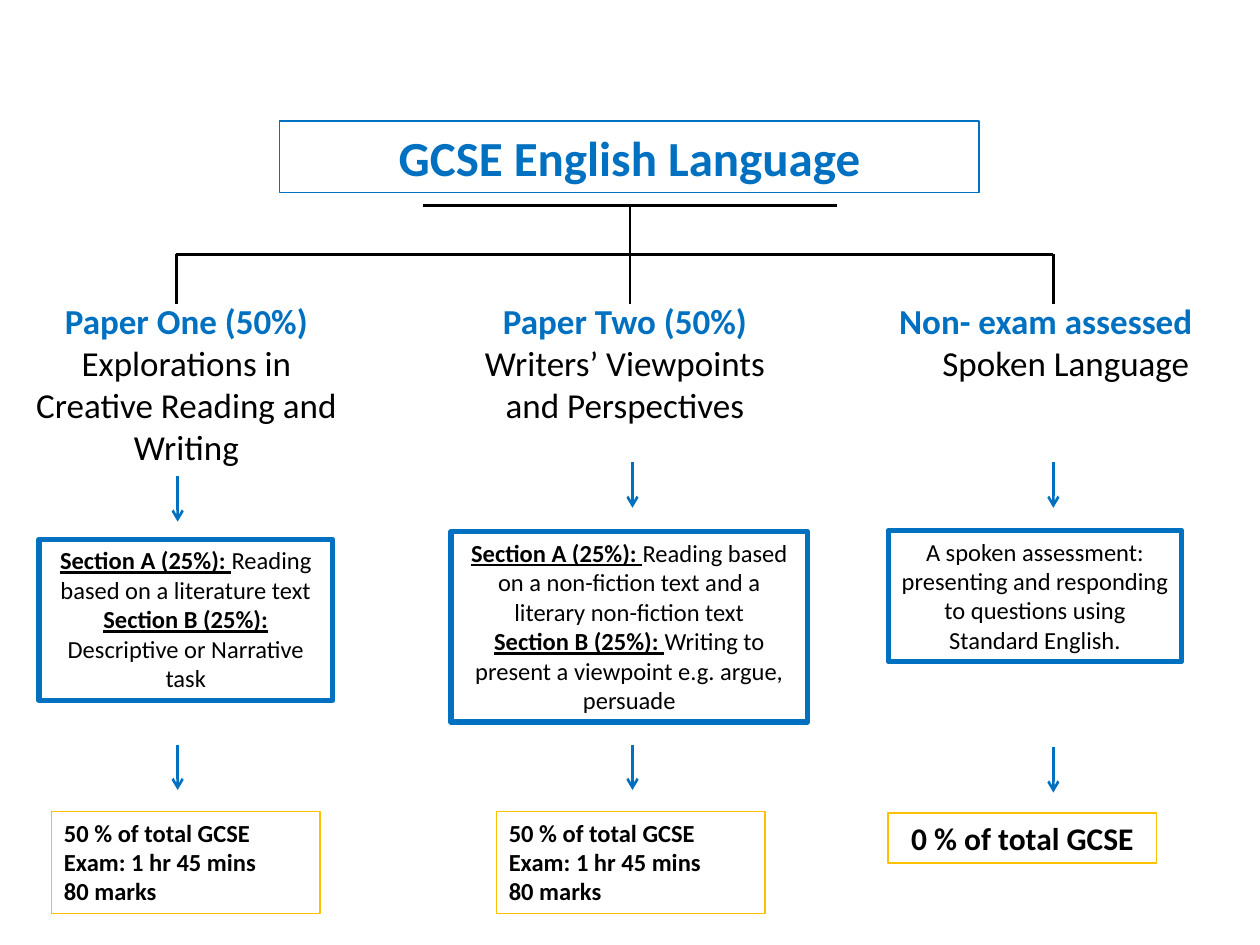
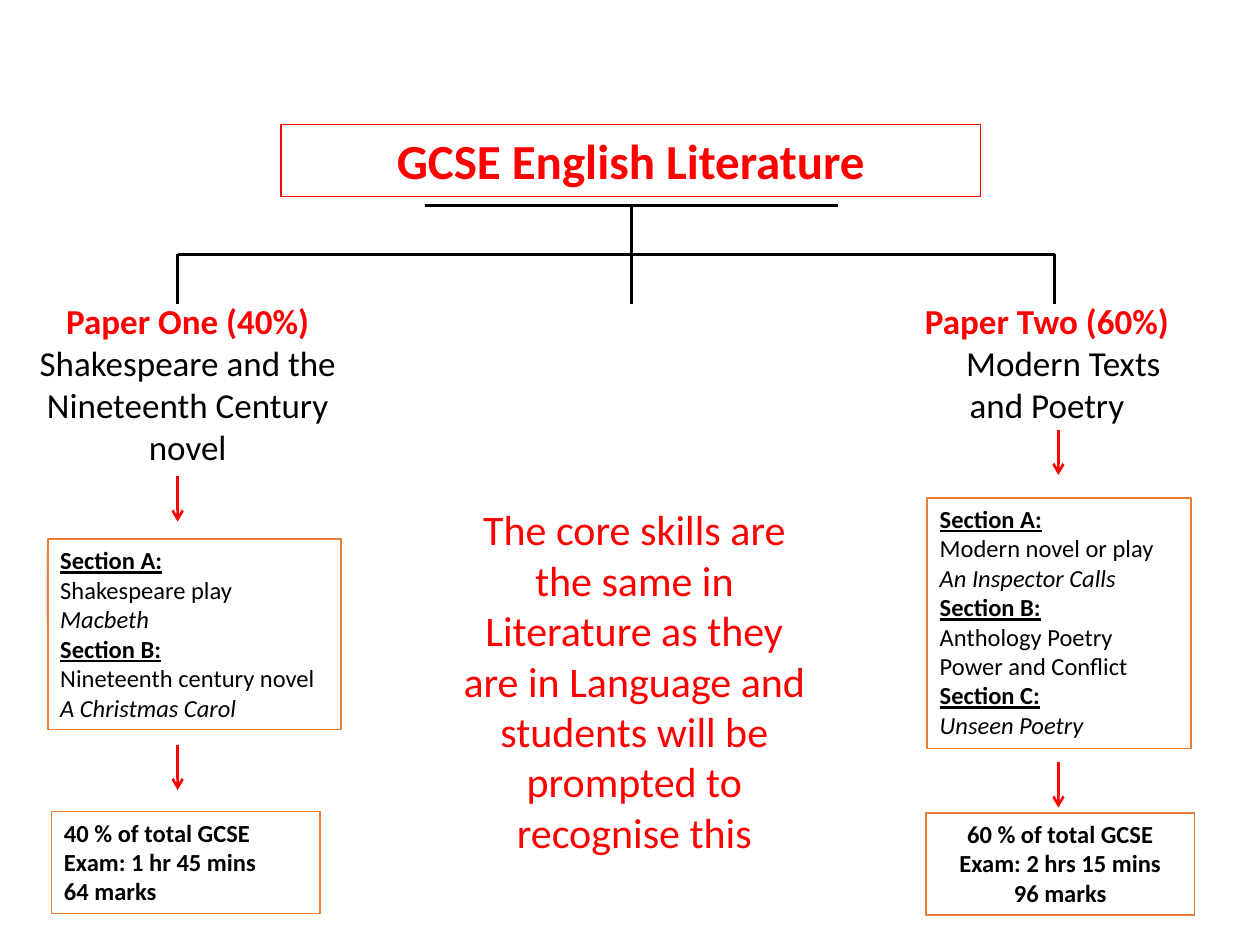
from dataclasses import dataclass

from lxml import etree
from pptx import Presentation
from pptx import util as u
from pptx.dml.color import RGBColor
from pptx.enum import shapes, text
from pptx.oxml import ns

COLORS = {
    "black": "000000", "white": "FFFFFF", "blue": "0070C0", "gold": "FFC000",
    "red": "FF0000", "orange": "ED7D31", "yellow": "FFFF00", "pale": "DAE3F3",
}
FONT = "Calibri"
LEFT, CENTER = text.PP_ALIGN.LEFT, text.PP_ALIGN.CENTER
TREE_TOP, TREE_BAR, TREE_END = 1.63, 2.02, 2.41
ARROW_LENGTH = 0.36


@dataclass
class Line:
    """One paragraph: (words, style) spans, where style holds b, i or u."""
    spans: list
    color: str = "black"
    indent: float = 0


def line(words, style="", color="black", indent=0):
    return Line([(words, style)], color, indent)


def rgb(name):
    return RGBColor.from_string(COLORS[name])


# Text
def set_style(font, style):
    font.bold = "b" in style
    font.italic = "i" in style
    font.underline = "u" in style


def write_lines(box, lines, size, align):
    frame = box.text_frame
    frame.word_wrap = True
    frame.auto_size = text.MSO_AUTO_SIZE.SHAPE_TO_FIT_TEXT
    frame.vertical_anchor = text.MSO_ANCHOR.TOP
    for index, item in enumerate(lines):
        para = frame.add_paragraph() if index else frame.paragraphs[0]
        para.alignment = align
        if item.indent:
            para._p.get_or_add_pPr().set("marL", str(u.Inches(item.indent)))
        para.font.name, para.font.size = FONT, u.Pt(size)
        para.font.color.rgb = rgb(item.color)
        for words, style in item.spans:
            span = para.add_run()
            span.text = words
            if len(item.spans) > 1:
                set_style(span.font, style)
        if len(item.spans) == 1:
            set_style(para.font, item.spans[0][1])


def add_text(page, place, lines, size=20):
    box = page.shapes.add_textbox(*map(u.Inches, place))
    write_lines(box, lines, size, CENTER)


# Boxes and lines
def add_panel(page, place, border, width, fill=None,
              kind=shapes.MSO_SHAPE.RECTANGLE):
    panel = page.shapes.add_shape(kind, *map(u.Inches, place))
    panel.shadow.inherit = False
    if fill:
        panel.fill.solid()
        panel.fill.fore_color.rgb = rgb(fill)
    else:
        panel.fill.background()
    panel.line.color.rgb = rgb(border)
    panel.line.width = u.Pt(width)
    return panel


def add_box(page, place, lines, border, width=1, size=14, align=LEFT, fill="white"):
    write_lines(add_panel(page, place, border, width, fill), lines, size, align)


def add_line(page, x1, y1, x2, y2, color="black"):
    link = page.shapes.add_connector(
        shapes.MSO_CONNECTOR.STRAIGHT, *map(u.Inches, (x1, y1, x2, y2)))
    link.line.color.rgb = rgb(color)
    link.line.width = u.Pt(1.5)
    etree.SubElement(link._element.spPr, ns.qn("a:effectLst"))
    return link


def add_arrow(page, x, y, color):
    arrow = add_line(page, x, y, x, y + ARROW_LENGTH, color)
    etree.SubElement(arrow.line._get_or_add_ln(), ns.qn("a:tailEnd"), type="arrow")


# Parts both slides share
def add_title(page, left, top, words, color):
    add_box(page, (left, top, 5.55, 0.57), [line(words, "b", color)],
            color, 0.75, 28, CENTER, None)


def add_tree(page, center):
    first, last = center - 3.6, center + 3.36
    add_line(page, center - 1.64, TREE_TOP, center + 1.64, TREE_TOP)
    add_line(page, center, TREE_TOP, center, TREE_END)
    add_line(page, first, TREE_BAR, last, TREE_BAR)
    for x in (first, last):
        add_line(page, x, TREE_BAR, x, TREE_END)


def add_weight(page, left, top, facts, border, align=LEFT):
    add_box(page, (left, top, 2.13, 0.81), [line(fact, "b") for fact in facts],
            border, align=align)


def section(label, words):
    return Line([(label + " ", "bu"), (words, "")])


def build_language(page):
    add_title(page, 2.22, 0.96, "GCSE English Language", "blue")
    add_tree(page, 5)

    # Papers
    add_text(page, (0.08, 2.33, 2.8, 1.45), [
        line("Paper One (50%)", "b", "blue"),
        line("Explorations in Creative Reading and Writing")])
    add_text(page, (3.67, 2.33, 2.58, 1.11), [
        line("Paper Two (50%)", "b", "blue"),
        line("Writers’ Viewpoints and Perspectives")])
    add_text(page, (6.25, 2.33, 3.36, 0.77), [
        line("Non- exam assessed", "b", "blue", 0.74),
        line("Spoken Language", indent=1.06)])

    # Sections
    add_box(page, (0.31, 4.28, 2.33, 1.28), [
        section("Section A (25%):", "Reading based on a literature text"),
        section("Section B (25%):", "Descriptive or Narrative task"),
    ], "blue", 3, align=CENTER)
    add_box(page, (3.58, 4.22, 2.83, 1.51), [
        section("Section A (25%):",
                "Reading based on a non-fiction text and a literary non-fiction text"),
        section("Section B (25%):",
                "Writing to present a viewpoint e.g. argue, persuade"),
    ], "blue", 3, align=CENTER, fill=None)
    add_box(page, (7.05, 4.21, 2.33, 1.04), [
        line("A spoken assessment: presenting and responding to questions "
             "using Standard English."),
    ], "blue", 3, align=CENTER, fill=None)

    # Weights
    for left in (0.41, 3.94):
        add_weight(page, left, 6.44,
                   ["50 % of total GCSE", "Exam: 1 hr 45 mins", "80 marks"], "gold")
    add_box(page, (7.05, 6.45, 2.13, 0.4), [line("0 % of total GCSE", "b")],
            "gold", size=18, align=CENTER)

    for x, *tops in ((1.41, 3.78, 5.91), (5.02, 3.67, 5.91), (8.36, 3.67, 5.93)):
        for top in tops:
            add_arrow(page, x, top, "blue")


def build_literature(page):
    add_panel(page, (0.37, 4.29, 1.81, 0.75), "pale", 1, "yellow",
              shapes.MSO_SHAPE.ROUNDED_RECTANGLE)
    add_title(page, 2.23, 0.99, "GCSE English Literature", "red")
    add_tree(page, 5.01)

    # Papers
    add_text(page, (0.09, 2.33, 2.8, 1.45), [
        line("Paper One (40%)", "b", "red"),
        line("Shakespeare and the Nineteenth Century novel")])
    add_text(page, (6.26, 2.33, 3.36, 1.11), [
        line("Paper Two (60%)", "b", "red", 0.74),
        line("Modern Texts", indent=1),
        line("and Poetry", indent=0.74)])

    # Sections
    add_box(page, (0.38, 4.28, 2.33, 1.51), [
        line("Section A:", "bu"),
        line("Shakespeare play"),
        line("Macbeth", "i"),
        line("Section B:", "bu"),
        line("Nineteenth century novel"),
        line("A Christmas Carol", "i"),
    ], "orange")
    add_box(page, (7.36, 3.95, 2.09, 1.99), [
        line("Section A:", "bu"),
        line("Modern novel or play"),
        line("An Inspector Calls", "i"),
        line("Section B:", "bu"),
        line("Anthology Poetry"),
        line("Power and Conflict"),
        line("Section C:", "bu"),
        line("Unseen Poetry", "i"),
    ], "orange")

    # Weights
    add_weight(page, 0.41, 6.44,
               ["40 % of total GCSE", "Exam: 1 hr 45 mins", "64 marks"], "orange")
    add_weight(page, 7.35, 6.45,
               ["60 % of total GCSE", "Exam: 2 hrs 15 mins", "96 marks"],
               "orange", CENTER)

    for x, *tops in ((1.41, 3.78, 5.91), (8.4, 3.41, 6.05)):
        for top in tops:
            add_arrow(page, x, top, "red")

    # Core message
    add_text(page, (3.5, 3.95, 3.07, 2.93), [
        line("The core skills are the same in Literature as they are in Language "
             "and students will be prompted to recognise this", color="red"),
    ], 24)


def main():
    deck = Presentation()
    deck.slide_width, deck.slide_height = u.Inches(10), u.Inches(7.5)
    for build in (build_language, build_literature):
        build(deck.slides.add_slide(deck.slide_layouts[6]))
    deck.save("out.pptx")


if __name__ == "__main__":
    main()
